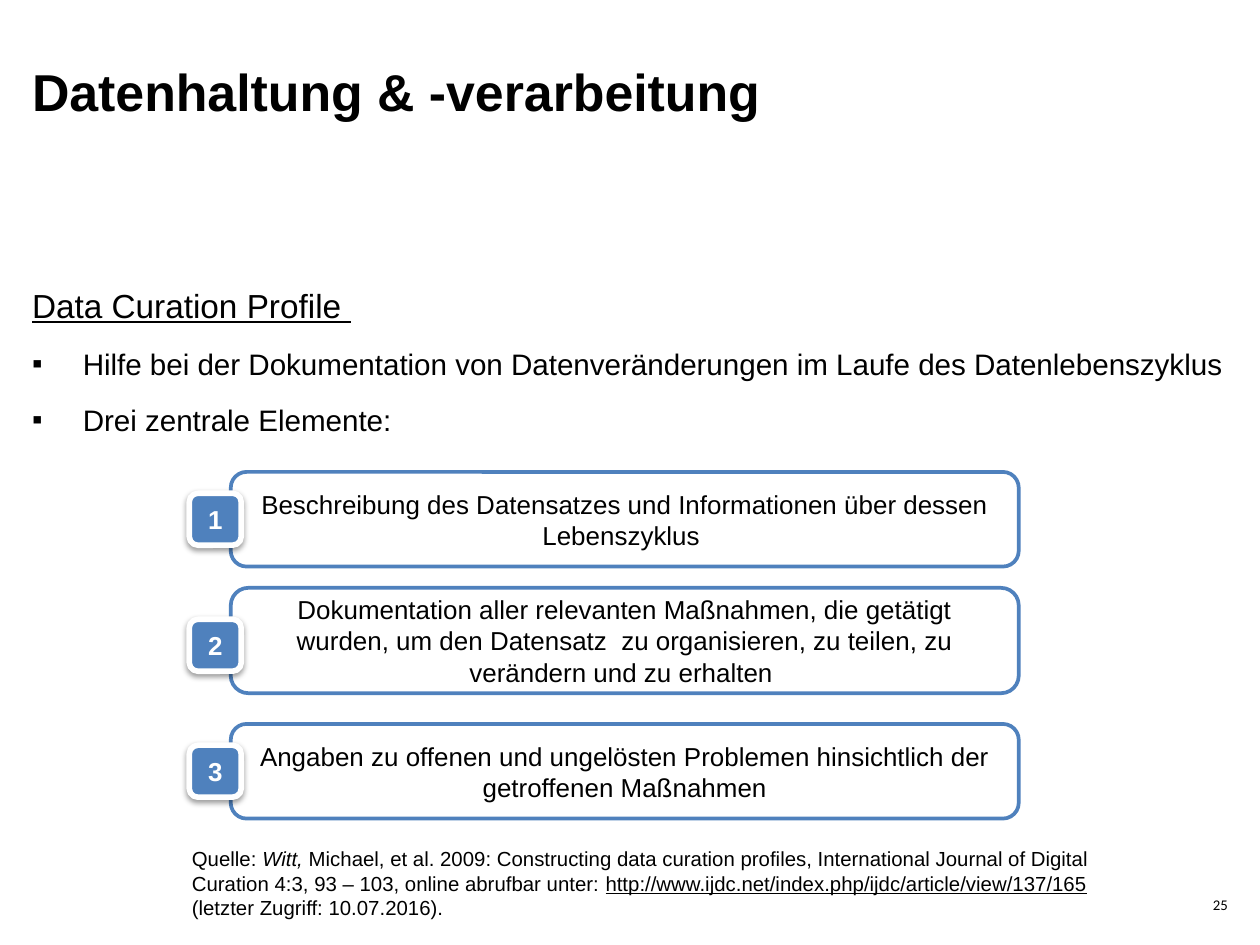
from lxml.etree import SubElement
from pptx import Presentation
from pptx.dml.color import RGBColor
from pptx.enum.shapes import MSO_SHAPE as SHAPE
from pptx.enum.text import MSO_ANCHOR as ANCHOR, MSO_AUTO_SIZE as AUTO, PP_ALIGN as ALIGN
from pptx.oxml.ns import qn
from pptx.util import Pt

BLACK, WHITE, BLUE = "000000", "FFFFFF", "4F81BD"


def rgb(value):
    return RGBColor.from_string(value)


def assign(obj, values):
    for name, value in values.items():
        setattr(obj, name, value)


class SlideBuilder:
    font = {"name": "Arial", "size": Pt(14), "bold": False, "italic": False, "underline": False}

    def __init__(self, s):
        self.s = s

    def paragraph(self, p, runs, color=BLACK, fmt=None, **style):
        assign(p, fmt or {})
        for text, extra in runs:
            r = p.add_run()
            r.text = text
            assign(r.font, {**self.font, **style, **extra})
            r.font.color.rgb = rgb(color)

    def bullet(self, p, char, indent):
        pPr = p._p.get_or_add_pPr()
        pPr.set("marL", str(Pt(indent)))
        pPr.set("indent", str(-Pt(indent)))
        SubElement(pPr, qn("a:buFont"), typeface="Arial")
        SubElement(pPr, qn("a:buChar"), char=char)

    def text(self, box, inset=0, **frame):
        tf = self.s.shapes.add_textbox(*map(Pt, box)).text_frame
        margins = dict.fromkeys(("margin_left", "margin_right"), Pt(inset))
        margins.update(dict.fromkeys(("margin_top", "margin_bottom"), Pt(inset / 2)))
        assign(tf, {"word_wrap": True, **margins, **frame})
        return tf

    def rounded(self, box, text, fill, line, width, color, **style):
        sp = self.s.shapes.add_shape(SHAPE.ROUNDED_RECTANGLE, *map(Pt, box))
        sp.shadow.inherit = False
        sp.fill.solid()
        sp.fill.fore_color.rgb = rgb(fill)
        sp.line.color.rgb = rgb(line)
        sp.line.width = Pt(width)
        tf = sp.text_frame
        assign(tf, {"word_wrap": True, "vertical_anchor": ANCHOR.MIDDLE})
        self.paragraph(tf.paragraphs[0], [(text, {})], color, {"alignment": ALIGN.CENTER}, **style)
        return sp

    def badge(self, box, text):
        sp = self.rounded(box, text, BLUE, WHITE, 3, WHITE, bold=True)
        effects = sp._element.spPr.find(qn("a:effectLst"))
        shadow = SubElement(effects, qn("a:outerShdw"), blurRad=str(Pt(3.1)),
                            dist=str(Pt(1.6)), dir="5400000", rotWithShape="0")
        tint = SubElement(shadow, qn("a:srgbClr"), val=BLACK)
        SubElement(tint, qn("a:alpha"), val="38000")


def main():
    prs = Presentation()
    assign(prs, {"slide_width": Pt(680.4), "slide_height": Pt(510.4)})
    sb = SlideBuilder(prs.slides.add_slide(prs.slide_layouts[6]))

    title = sb.text((17.3, 36.7, 473.8, 85))
    sb.paragraph(title.paragraphs[0], [("Datenhaltung & -verarbeitung", {})],
                 fmt={"line_spacing": Pt(29)}, size=Pt(28), bold=True)

    body = sb.text((17.3, 143.3, 646.6, 307))
    spacing = {"line_spacing": 1.5, "space_after": Pt(1.5)}
    sb.paragraph(body.paragraphs[0], [("Data Curation Profile ", {})],
                 fmt=spacing, size=Pt(18), underline=True)
    for point in ("Hilfe bei der Dokumentation von Datenveränderungen im Laufe des Datenlebenszyklus",
                  "Drei zentrale Elemente:"):
        p = body.add_paragraph()
        assign(p, spacing)
        sb.bullet(p, "▪", 27.4)
        sb.paragraph(p, [(point, {})], size=Pt(16))

    number = sb.text((487.4, 481.7, 175.7, 11.5), vertical_anchor=ANCHOR.BOTTOM)
    sb.paragraph(number.paragraphs[0], [("25", {})], fmt={"alignment": ALIGN.RIGHT},
                 name="Calibri", size=Pt(8))

    elements = [
        (254.9, 51.1, "Beschreibung des Datensatzes und Informationen über dessen Lebenszyklus "),
        (317.5, 56.9, "Dokumentation aller relevanten Maßnahmen, die getätigt wurden, um den "
                      "Datensatz  zu organisieren, zu teilen, zu verändern und zu erhalten "),
        (391, 51.1, "Angaben zu offenen und ungelösten Problemen hinsichtlich der "
                    "getroffenen Maßnahmen"),
    ]
    for i, (top, height, text) in enumerate(elements):
        sb.rounded((124.6, top, 425.5, height), text, WHITE, BLUE, 2, BLACK)
        sb.badge((102.2, 266.4 + 68.05 * i, 28.1, 28.1), str(i + 1))

    source = sb.text((96.5, 453.6, 510.5, 61.9), inset=7.2, auto_size=AUTO.SHAPE_TO_FIT_TEXT)
    sb.paragraph(source.paragraphs[0], [
        ("Quelle: ", {}),
        ("Witt, ", {"italic": True}),
        ("Michael, et al. 2009: Constructing data curation profiles, International Journal of "
         "Digital Curation 4:3, 93 – 103, online abrufbar unter: ", {}),
        ("http://www.ijdc.net/index.php/ijdc/article/view/137/165", {"underline": True}),
        (" (letzter Zugriff: 10.07.2016).", {}),
    ], size=Pt(11))

    prs.save("out.pptx")


if __name__ == "__main__":
    main()
